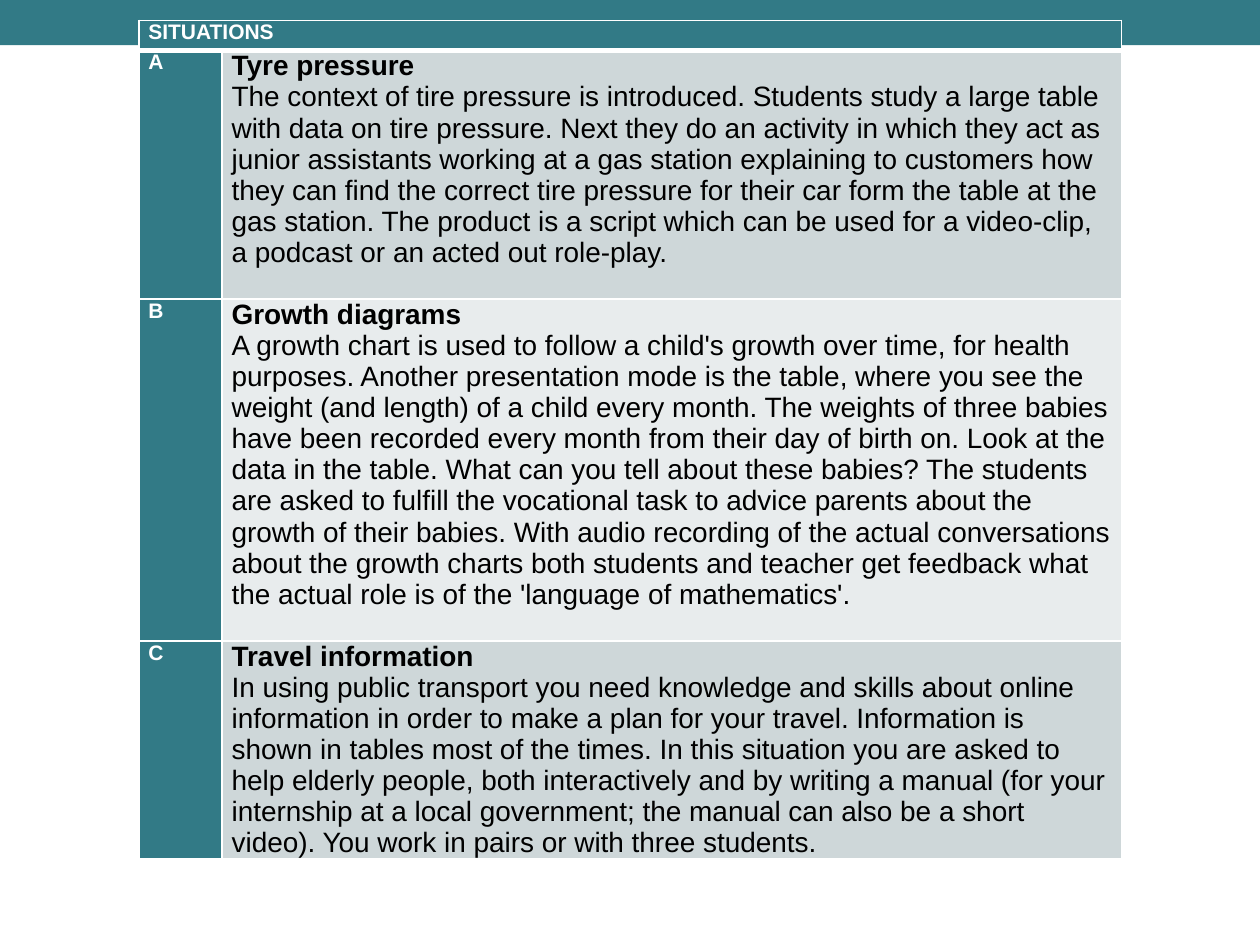
from lxml.etree import SubElement
from pptx import Presentation
from pptx.dml.color import RGBColor
from pptx.enum.shapes import MSO_SHAPE
from pptx.oxml.ns import qn
from pptx.util import Cm, Pt

COLORS = {
    "teal": "327A86",
    "band_dark": "CED7D9",
    "band_light": "E8ECED",
    "white": "FFFFFF",
    "black": "000000",
}
FONT = "Arial"
COLUMN_WIDTHS = [1.68, 18.13]
ROW_HEIGHTS = [0.61, 4.85, 6.68, 4.24]
SITUATIONS = [
    ("A", "Tyre pressure",
     "The context of tire pressure is introduced. Students study a large table with data on "
     "tire pressure. Next they do an activity in which they act as junior assistants working "
     "at a gas station explaining to customers how they can find the correct tire pressure for "
     "their car form the table at the gas station. The product is a script which can be used "
     "for a video-clip, a podcast or an acted out role-play."),
    ("B", "Growth diagrams",
     "A growth chart is used to follow a child's growth over time, for health purposes. Another "
     "presentation mode is the table, where you see the weight (and length) of a child every "
     "month. The weights of three babies have been recorded every month from their day of birth "
     "on. Look at the data in the table. What can you tell about these babies? The students are "
     "asked to fulfill the vocational task to advice parents about the growth of their babies. "
     "With audio recording of the actual conversations about the growth charts both students "
     "and teacher get feedback what the actual role is of the 'language of mathematics'."),
    ("C", "Travel information",
     "In using public transport you need knowledge and skills about online information in order "
     "to make a plan for your travel. Information is shown in tables most of the times. In this "
     "situation you are asked to help elderly people, both interactively and by writing a manual "
     "(for your internship at a local government; the manual can also be a short video). You "
     "work in pairs or with three students."),
]


def color(name):
    return RGBColor.from_string(COLORS[name])


def add_span(para, text, size, color_name, bold):
    span = para.add_run()
    span.text = text
    span.font.name = FONT
    span.font.size = Pt(size)
    span.font.bold = bold
    span.font.color.rgb = color(color_name)


def add_borders(cell, top=1, bottom=1):
    properties = cell._tc.get_or_add_tcPr()
    for side, width in (("lnL", 1), ("lnR", 1), ("lnT", top), ("lnB", bottom)):
        line = SubElement(properties, qn(f"a:{side}"), w=str(Pt(width)))
        fill = SubElement(line, qn("a:solidFill"))
        SubElement(fill, qn("a:srgbClr"), val=COLORS["white"])


def format_cell(cell, fill_name, top=1, bottom=1):
    add_borders(cell, top, bottom)
    cell.fill.solid()
    cell.fill.fore_color.rgb = color(fill_name)
    cell.margin_left = cell.margin_right = Cm(0.19)
    cell.margin_top = cell.margin_bottom = 0


def add_top_band(page, left, top, width, height):
    band = page.shapes.add_shape(MSO_SHAPE.RECTANGLE, left, top, width, height)
    band.shadow.inherit = False
    band.fill.solid()
    band.fill.fore_color.rgb = color("teal")
    band.line.fill.background()


def add_situations(page, left, top, width, height):
    frame = page.shapes.add_table(len(ROW_HEIGHTS), len(COLUMN_WIDTHS), left, top, width, height)
    table = frame.table
    table.horz_banding = False
    for column, size in zip(table.columns, COLUMN_WIDTHS):
        column.width = Cm(size)
    for row, size in zip(table.rows, ROW_HEIGHTS):
        row.height = Cm(size)

    header = table.cell(0, 0)
    header.merge(table.cell(0, 1))
    for cell in table.rows[0].cells:
        format_cell(cell, "teal", bottom=3)
    add_span(header.text_frame.paragraphs[0], "SITUATIONS", 12, "white", True)

    for index, (letter, title, description) in enumerate(SITUATIONS, 1):
        label, body = table.rows[index].cells
        top_width = 3 if index == 1 else 1
        format_cell(label, "teal", top_width)
        format_cell(body, "band_dark" if index % 2 else "band_light", top_width)
        if index < len(SITUATIONS):
            body.margin_bottom = Cm(0.62)
        add_span(label.text_frame.paragraphs[0], letter, 12, "white", True)
        add_span(body.text_frame.paragraphs[0], title, 16, "black", True)
        add_span(body.text_frame.add_paragraph(), description, 16, "black", False)


def main():
    deck = Presentation()
    deck.slide_width, deck.slide_height = Cm(25.4), Cm(19.05)
    page = deck.slides.add_slide(deck.slide_layouts[6])
    add_top_band(page, 0, 0, deck.slide_width, Cm(0.91))
    add_situations(page, Cm(2.8), Cm(0.41), Cm(sum(COLUMN_WIDTHS)), Cm(sum(ROW_HEIGHTS)))
    deck.save("out.pptx")


if __name__ == "__main__":
    main()
